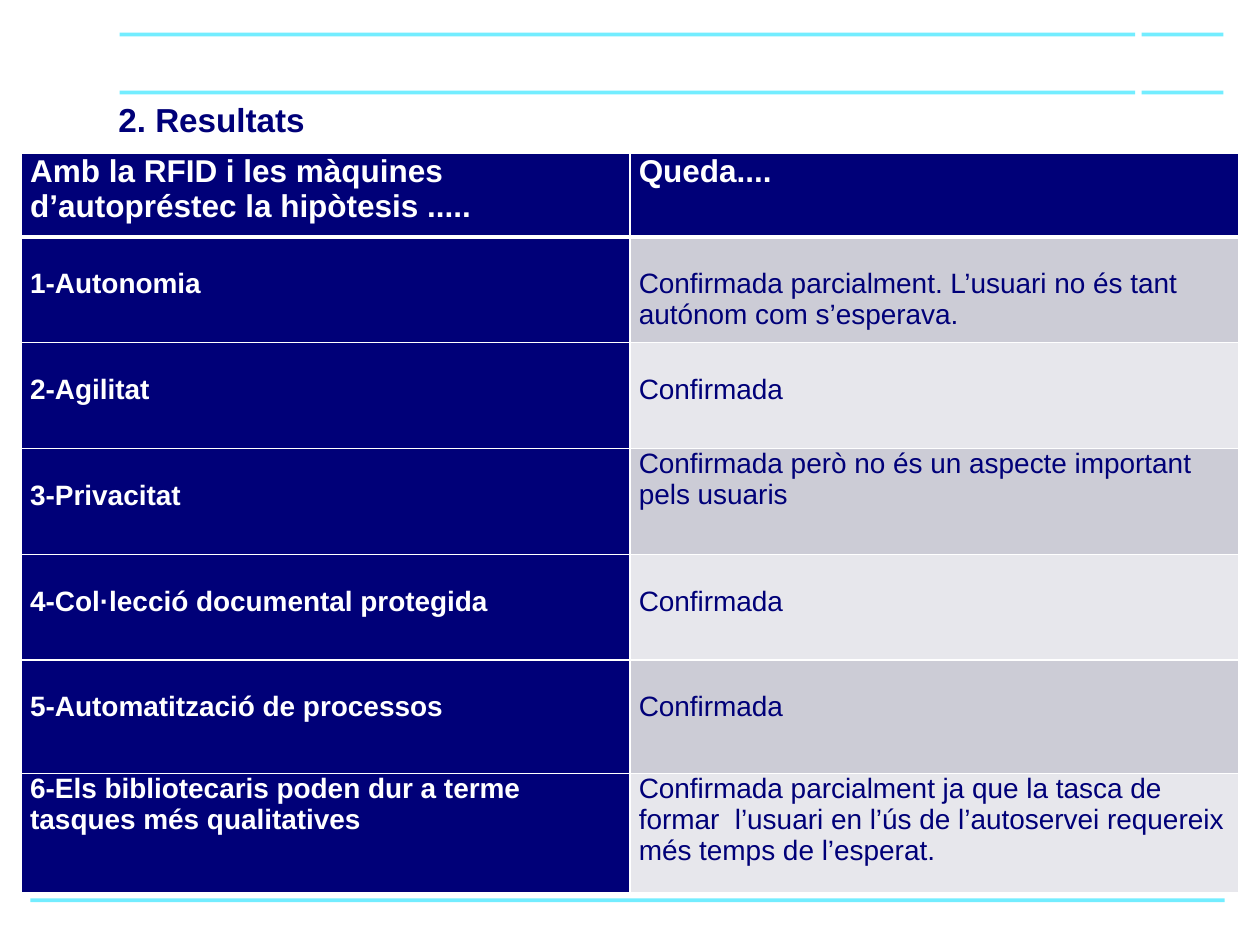
from lxml import etree
from pptx import Presentation
from pptx.dml.color import RGBColor
from pptx.enum.shapes import MSO_SHAPE
from pptx.enum.text import MSO_ANCHOR, PP_ALIGN
from pptx.oxml.ns import qn
from pptx.util import Inches, Pt

RECT = MSO_SHAPE.RECTANGLE
TOP = MSO_ANCHOR.TOP
LEFT = PP_ALIGN.LEFT
NAVY, CYAN, WHITE = "000078", "73EDFF", "FFFFFF"
BANDS = ["CCCCD6", "E7E7EC"]
WIDE, HIGH = 10, 7.5

TITLE = "2. Resultats"
HEAD = ("Amb la RFID i les màquines d’autopréstec la hipòtesis .....", "Queda....")
ROWS = [
    ("1-Autonomia", "Confirmada parcialment. L’usuari no és tant autónom com s’esperava."),
    ("2-Agilitat", "Confirmada"),
    ("3-Privacitat", "Confirmada però no és un aspecte important pels usuaris"),
    ("4-Col·lecció documental protegida", "Confirmada"),
    ("5-Automatització de processos", "Confirmada"),
    ("6-Els bibliotecaris poden dur a terme tasques més qualitatives",
     "Confirmada parcialment ja que la tasca de formar  l’usuari en l’ús de "
     "l’autoservei requereix més temps de l’esperat."),
]
FLUSH = {(0, 0), (0, 1), (3, 1), (6, 0), (6, 1)}
TALL = [8.8] + [11.2] * 4 + [12, 12.67]
SPANS = [(9.5, 80.6), (90.6, 6.5)]
BARS = [(x, y, w) for x, w in SPANS for y in (3.47, 9.6)] + [(2.4, 95.07, 94.8)]


def rgb(code):
    return RGBColor.from_string(code)


def across(share):
    return Inches(WIDE * share / 100)


def down(share):
    return Inches(HIGH * share / 100)


def write(frame, text, size=16, color=NAVY, bold=False):
    frame.word_wrap = True
    para = frame.paragraphs[0]
    para.alignment = LEFT
    run = para.add_run()
    run.text = text
    font = run.font
    font.name, font.size, font.bold = "Arial", Pt(size), bold
    font.color.rgb = rgb(color)


def edge(cell, side, width):
    props = cell._tc.get_or_add_tcPr()
    line = etree.SubElement(props, qn("a:ln" + side), w=str(Pt(width)))
    fill = etree.SubElement(line, qn("a:solidFill"))
    etree.SubElement(fill, qn("a:srgbClr"), val=WHITE)


def add_bars(slide):
    for x, y, w in BARS:
        bar = slide.shapes.add_shape(RECT, across(x), down(y), across(w), down(0.4))
        bar.shadow.inherit = False
        bar.fill.solid()
        bar.fill.fore_color.rgb = rgb(CYAN)
        bar.line.fill.background()


def add_title(slide):
    title = slide.shapes.title
    title.left, title.top = across(8.4), down(9.2)
    title.width, title.height = across(81.7), down(15.2)
    frame = title.text_frame
    frame.vertical_anchor = TOP
    frame.margin_left = frame.margin_right = Inches(0.1)
    frame.margin_top = frame.margin_bottom = Inches(0.1)
    write(frame, TITLE, size=19, bold=True)


def add_grid(slide):
    data = [HEAD] + ROWS
    grid = slide.shapes.add_table(len(data), len(HEAD), across(1.7), down(16.27),
                                  across(96.6), down(sum(TALL))).table
    for row, share in zip(grid.rows, TALL):
        row.height = down(share)
    for r, texts in enumerate(data):
        for c, text in enumerate(texts):
            cell = grid.cell(r, c)
            dark = r == 0 or c == 0
            cell.margin_left = cell.margin_right = Inches(0.07)
            cell.margin_top = Inches(0 if (r, c) in FLUSH else 0.25)
            cell.margin_bottom = 0
            cell.vertical_anchor = TOP
            for side in "LRTB":
                thick = (r, side) in ((0, "B"), (1, "T"))
                edge(cell, side, 3 if thick else 1)
            cell.fill.solid()
            cell.fill.fore_color.rgb = rgb(NAVY if dark else BANDS[(r - 1) % 2])
            write(cell.text_frame, text, size=16 if r else 18,
                  color=WHITE if dark else NAVY, bold=dark)


def main():
    deck = Presentation()
    deck.slide_width, deck.slide_height = Inches(WIDE), Inches(HIGH)
    slide = deck.slides.add_slide(deck.slide_layouts[5])
    add_bars(slide)
    add_title(slide)
    add_grid(slide)
    deck.save("out.pptx")


if __name__ == "__main__":
    main()
